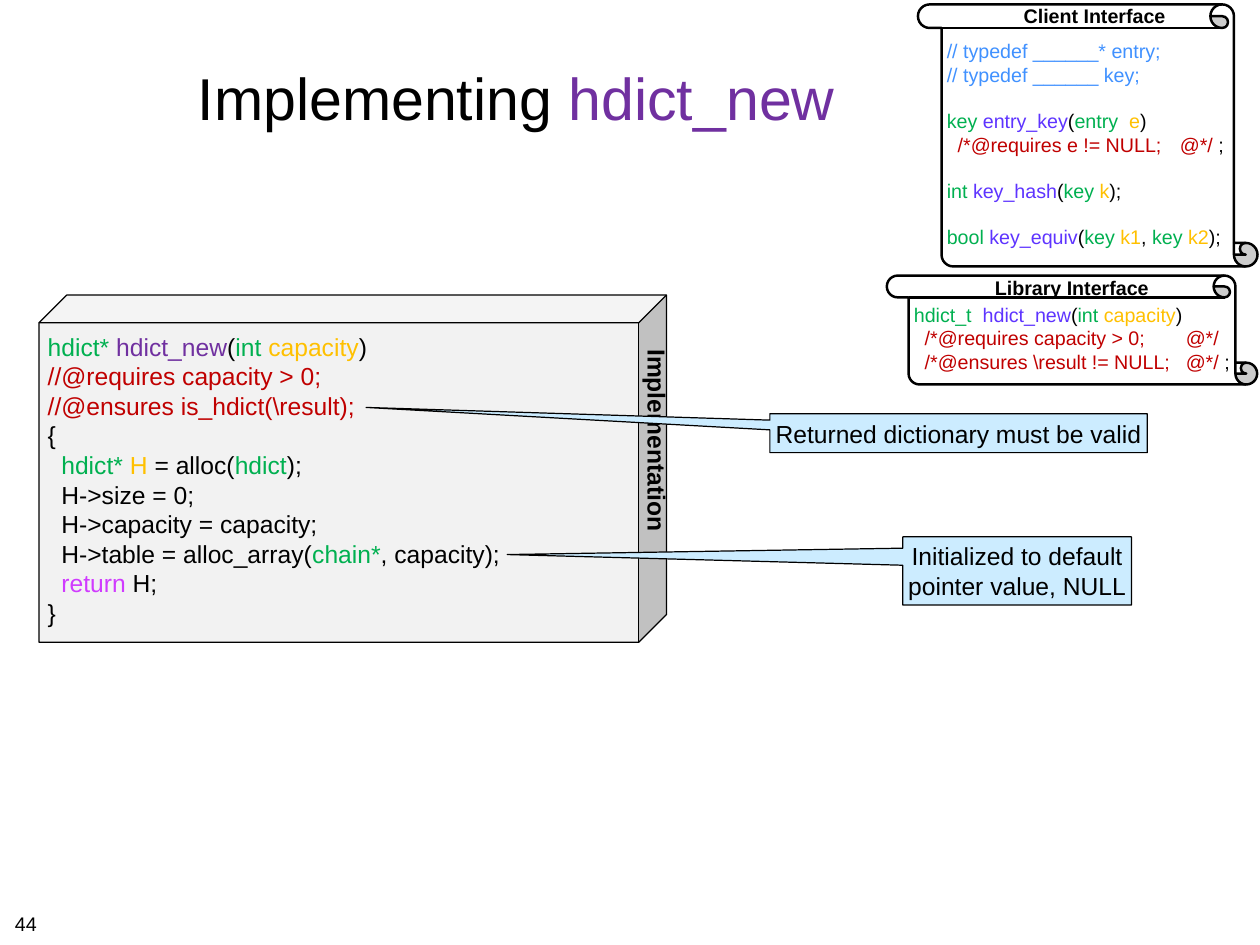
import dataclasses

import lxml.etree
import pptx
import pptx.dml.color
import pptx.enum.shapes
import pptx.enum.text
import pptx.oxml.ns
import pptx.util

Pt = pptx.util.Pt
Form = pptx.enum.shapes.MSO_SHAPE
Align = pptx.enum.text.PP_ALIGN
Anchor = pptx.enum.text.MSO_ANCHOR
Fit = pptx.enum.text.MSO_AUTO_SIZE


@dataclasses.dataclass
class Theme:
    font: str = "Arial"
    head: int = 48
    code: int = 20
    small: int = 16
    ink: str = "000000"
    paper: str = "FFFFFF"
    block: str = "F2F2F2"
    note: str = "CCECFF"
    kind: str = "00B050"
    func: str = "7030A0"
    proto: str = "5E34FF"
    arg: str = "FFC000"
    rule: str = "C00000"
    remark: str = "4091FF"
    word: str = "D03BFF"

    def color(self, role):
        return pptx.dml.color.RGBColor.from_string(getattr(self, role))


class Page:
    def __init__(self, theme, slide):
        self.theme = theme
        self.slide = slide

    def put(self, frame, lines, size, align=Align.LEFT, bold=False, tab=None):
        """Fill a frame; a line is plain text or (text, role) pairs, and an empty one adds a gap."""
        gap, para = 0, None
        for line in lines:
            if not line:
                gap = size * 1.15
                continue
            para = frame.add_paragraph() if para else frame.paragraphs[0]
            para.alignment = align
            para.space_before = Pt(gap)
            gap = 0
            if isinstance(line, str):
                para.text = line
                roles = ["ink"] * len(para.runs)
            else:
                roles = [role for _, role in line]
                for text, _ in line:
                    para.add_run().text = text
            for run, role in zip(para.runs, roles):
                run.font.name = self.theme.font
                run.font.size = Pt(size)
                run.font.bold = bold
                run.font.color.rgb = self.theme.color(role)
            if tab:
                self.stop(para, tab)

    def stop(self, para, tab):
        """Add a left tab stop."""
        tag = pptx.oxml.ns.qn
        props = para._p.get_or_add_pPr()
        stops = lxml.etree.SubElement(props, tag("a:tabLst"))
        lxml.etree.SubElement(stops, tag("a:tab"), pos=str(Pt(tab)), algn="l")

    def frame(self, shape, pads, anchor=Anchor.TOP, wrap=False, fit=Fit.NONE):
        frame = shape.text_frame
        frame.margin_left, frame.margin_top, frame.margin_right, frame.margin_bottom = map(Pt, pads)
        frame.vertical_anchor = anchor
        frame.word_wrap = wrap
        frame.auto_size = fit
        return frame

    def title(self, box, line):
        shape = self.slide.shapes.title
        shape.left, shape.top, shape.width, shape.height = map(Pt, box)
        frame = self.frame(shape, [4.3] * 4, Anchor.MIDDLE, wrap=True)
        self.put(frame, [line], self.theme.head, Align.CENTER)

    def shape(self, form, box, fill, width, adjust):
        shape = self.slide.shapes.add_shape(form, *map(Pt, box))
        shape.shadow.inherit = False
        shape.fill.solid()
        shape.fill.fore_color.rgb = self.theme.color(fill)
        shape.line.color.rgb = self.theme.color("ink")
        shape.line.width = Pt(width)
        for i, value in enumerate(adjust):
            shape.adjustments[i] = value
        return shape

    def scroll(self, box, curl, lines, tab, wrap):
        shape = self.shape(Form.VERTICAL_SCROLL, box, "paper", 2, [curl])
        shape._element.spPr.xfrm.set("flipH", "1")
        frame = self.frame(shape, (4.3, 4.3, 4.3, 0), Anchor.MIDDLE, wrap, Fit.SHAPE_TO_FIT_TEXT)
        self.put(frame, lines, self.theme.small, tab=tab)

    def cube(self, box, depth, lines):
        shape = self.shape(Form.CUBE, box, "block", 1, [depth])
        frame = self.frame(shape, (7.2, 7.2, 4.3, 4.3))
        self.put(frame, lines, self.theme.code)

    def note(self, box, tip, text):
        shape = self.shape(Form.RECTANGULAR_CALLOUT, box, "note", 1, tip)
        frame = self.frame(shape, [3.6] * 4, Anchor.MIDDLE, fit=Fit.SHAPE_TO_FIT_TEXT)
        self.put(frame, [text], self.theme.code, Align.CENTER)

    def label(self, box, text, size, turn=0):
        shape = self.slide.shapes.add_textbox(*map(Pt, box))
        shape.rotation = turn
        frame = self.frame(shape, (7.2, 3.6, 7.2, 3.6), fit=Fit.SHAPE_TO_FIT_TEXT)
        self.put(frame, [text], size, Align.CENTER, bold=True)

    def number(self, box, text):
        shape = self.slide.shapes.add_textbox(*map(Pt, box))
        self.put(self.frame(shape, [4.3] * 4), [text], self.theme.small)


CLIENT = [
    [("// typedef ______* entry;", "remark")],
    [("// typedef ______ key;", "remark")],
    [],
    [("key ", "kind"), ("entry_key", "proto"), ("(", "ink"), ("entry  ", "kind"),
     ("e", "arg"), (")", "ink")],
    [("  /*@requires e != NULL;\t@*/", "rule"), (" ;", "ink")],
    [],
    [("int ", "kind"), ("key_hash", "proto"), ("(", "ink"), ("key ", "kind"),
     ("k", "arg"), (");", "ink")],
    [],
    [("bool ", "kind"), ("key_equiv", "proto"), ("(", "ink"), ("key ", "kind"),
     ("k1", "arg"), (", ", "ink"), ("key ", "kind"), ("k2", "arg"), (");", "ink")],
]
PARAMS = [("(", "ink"), ("int ", "kind"), ("capacity", "arg"), (")", "ink")]
LIBRARY = [
    [("hdict_t  ", "kind"), ("hdict_new", "proto"), *PARAMS],
    [("  /*@requires capacity > 0;\t@*/", "rule")],
    [(r"  /*@ensures \result != NULL;" + "\t@*/", "rule"), (" ;", "ink")],
]
CODE = [
    [("hdict* ", "kind"), ("hdict_new", "func"), *PARAMS],
    [("//@requires capacity > 0;", "rule")],
    [(r"//@ensures is_hdict(\result);", "rule")],
    "{",
    [("  hdict* ", "kind"), ("H", "arg"), (" = alloc(", "ink"), ("hdict", "kind"), (");", "ink")],
    "  H->size = 0;",
    "  H->capacity = capacity;",
    [("  H->table = alloc_array(", "ink"), ("chain*", "kind"), (", capacity);", "ink")],
    [("  ", "ink"), ("return", "word"), (" H;", "ink")],
    "}",
]


def main():
    deck = pptx.Presentation()
    deck.slide_width, deck.slide_height = Pt(1024), Pt(768)
    theme = Theme()
    page = Page(theme, deck.slides.add_slide(deck.slide_layouts[5]))

    page.title((75, 20, 689, 118), [("Implementing ", "ink"), ("hdict_new", "func")])
    page.scroll((746, 3.6, 276, 213), 0.09, CLIENT, tab=189.4, wrap=True)
    page.label((823.7, 0, 131.8, 26.6), "Client Interface", theme.small)
    page.cube((31.7, 239.8, 510, 282.2), 0.08, CODE)
    page.label((452.2, 342, 163.4, 31.7), "Implementation", theme.code, turn=90)
    page.scroll((720.7, 224, 301, 88.5), 0.2, LIBRARY, tab=221, wrap=False)
    page.label((800.6, 220.3, 141, 26.6), "Library Interface", theme.small)
    page.note((625.7, 336.2, 306.7, 31.7), (-1.57, -0.66), "Returned dictionary must be valid")
    page.note((733.7, 436.3, 185.8, 55.4), (-2.23, -0.24),
              "Initialized to default\npointer value, NULL")
    page.number((7.9, 736.6, 26.6, 25.2), "44")
    deck.save("out.pptx")


if __name__ == "__main__":
    main()
